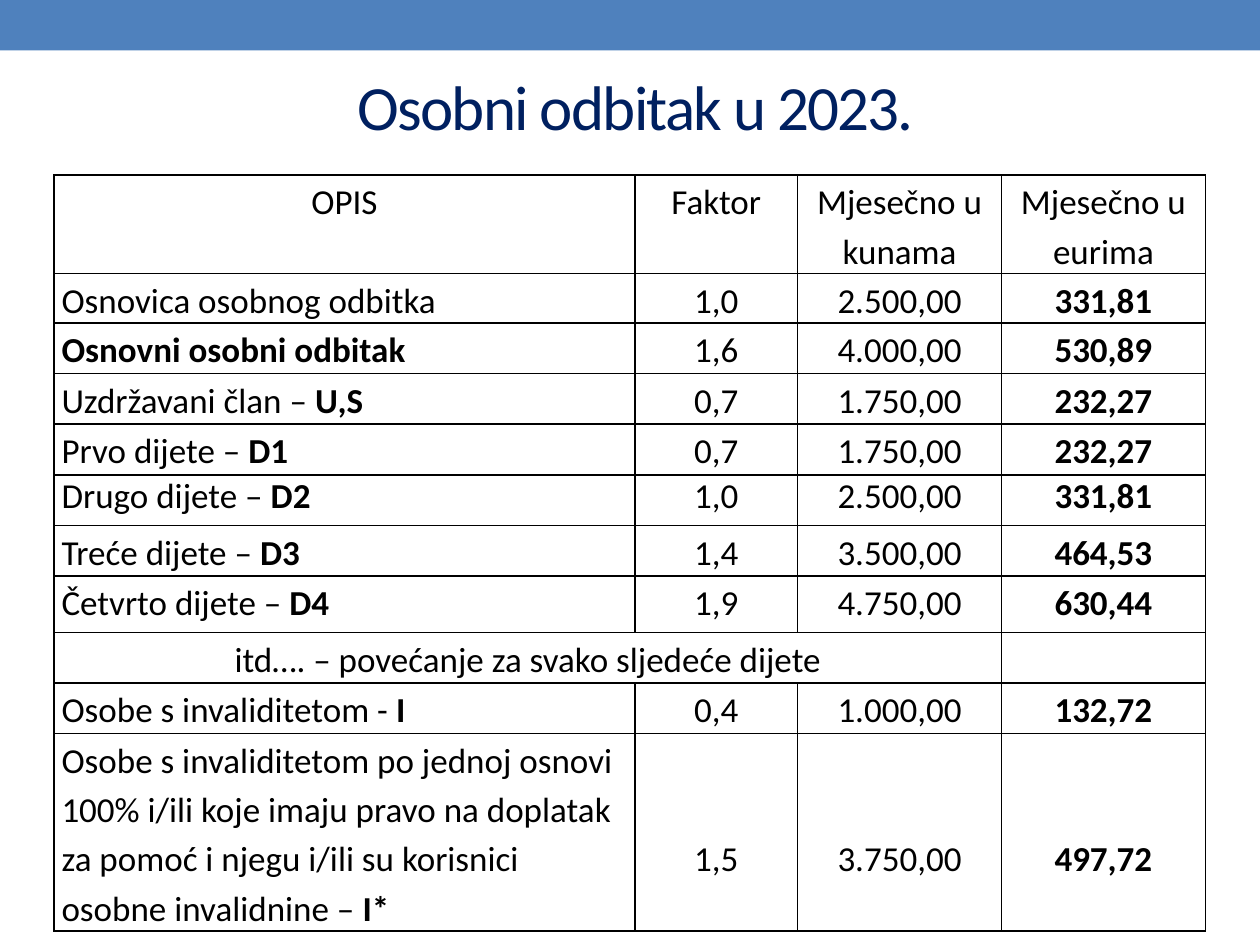
from lxml.etree import SubElement
from pptx import Presentation
from pptx.dml.color import RGBColor
from pptx.enum.shapes import MSO_SHAPE
from pptx.enum.text import MSO_ANCHOR, PP_ALIGN
from pptx.oxml.ns import qn
from pptx.util import Cm, Pt

FONT = "Calibri"
COLUMN_WIDTHS = [11.71, 3.28, 4.11, 4.11]
ROW_HEIGHTS = [1.3, 0.91] + [1.02] * 5 + [1.14, 1.02, 1.02, 3.56]
TWO_LINES = 1.98  # lowers the values in the tall last row to its third line

# Description, its bold ending, factor, kunas, euros
DEDUCTIONS = [
    ("Osnovica osobnog odbitka", "", "1,0", "2.500,00", "331,81"),
    ("", "Osnovni osobni odbitak", "1,6", "4.000,00", "530,89"),
    ("Uzdržavani član – ", "U,S", "0,7", "1.750,00", "232,27"),
    ("Prvo dijete – ", "D1", "0,7", "1.750,00", "232,27"),
    ("Drugo dijete – ", "D2", "1,0", "2.500,00", "331,81"),
    ("Treće dijete – ", "D3", "1,4", "3.500,00", "464,53"),
    ("Četvrto dijete – ", "D4", "1,9", "4.750,00", "630,44"),
    ("itd…. – povećanje za svako sljedeće dijete", "", "", "", ""),
    ("Osobe s invaliditetom - ", "I", "0,4", "1.000,00", "132,72"),
    ("Osobe s invaliditetom po jednoj osnovi 100% i/ili koje imaju pravo na "
     "doplatak za pomoć i njegu i/ili su korisnici osobne invalidnine – ",
     "I*", "1,5", "3.750,00", "497,72"),
]
HEADINGS = ("OPIS", "", "Faktor", "Mjesečno u kunama", "Mjesečno u eurima")
SINGLE_SPACED_ROW = 5
CONTINUATION_ROW = 8


def color(hex_string):
    return RGBColor.from_string(hex_string)


def style_font(font, size, hex_string):
    font.name = FONT
    font.size = Pt(size)
    font.color.rgb = color(hex_string)


def add_top_band(slide, left, top, width, height):
    band = slide.shapes.add_shape(
        MSO_SHAPE.RECTANGLE, Cm(left), Cm(top), Cm(width), Cm(height))
    band.shadow.inherit = False
    band.fill.solid()
    band.fill.fore_color.rgb = color("4F81BD")
    band.line.fill.background()


def place_title(slide, left, top, width, height):
    title = slide.shapes.title
    title.left, title.top = Cm(left), Cm(top)
    title.width, title.height = Cm(width), Cm(height)
    title.text_frame.vertical_anchor = MSO_ANCHOR.MIDDLE
    heading = title.text_frame.paragraphs[0]
    heading.alignment = PP_ALIGN.CENTER
    style_font(heading.font, 36, "002060")
    wording = heading.add_run()
    wording.text = "Osobni odbitak u 2023."
    wording.font._element.set("spc", "-100")


def outline_cell(cell):
    properties = cell._tc.get_or_add_tcPr()
    for position, side in enumerate(("a:lnL", "a:lnR", "a:lnT", "a:lnB")):
        border = properties.makeelement(qn(side), {"w": str(Pt(1))})
        properties.insert(position, border)
        fill = SubElement(border, qn("a:solidFill"))
        SubElement(fill, qn("a:srgbClr"), val="000000")


def write_cell(cell, parts, alignment, spacing):
    """Fill a cell with (text, bold) parts."""
    paragraph = cell.text_frame.paragraphs[0]
    paragraph.alignment = alignment
    paragraph.line_spacing = spacing
    style_font(paragraph.font, 20, "000000")
    for text, bold in parts:
        if text:
            run = paragraph.add_run()
            run.text = text
            run.font.bold = bold


def add_deduction_table(slide, left, top, width, height):
    rows = [HEADINGS] + DEDUCTIONS
    frame = slide.shapes.add_table(
        len(rows), len(COLUMN_WIDTHS), Cm(left), Cm(top), Cm(width), Cm(height))
    table = frame.table
    table.first_row = table.horz_banding = False
    for column, column_width in zip(table.columns, COLUMN_WIDTHS):
        column.width = Cm(column_width)
    for row, row_height in zip(table.rows, ROW_HEIGHTS):
        row.height = Cm(row_height)
    frame.height = Cm(height)

    for r, (description, code, *values) in enumerate(rows):
        spacing = 1.0 if r == SINGLE_SPACED_ROW else 1.15
        contents = [[(description, False), (code, True)]]
        contents += [[(value, r > 0 and value == values[-1])] for value in values]
        for c, parts in enumerate(contents):
            cell = table.cell(r, c)
            cell.margin_left = cell.margin_right = Cm(0.15)
            cell.margin_top = cell.margin_bottom = 0
            if c > 0 and r == len(rows) - 1:
                cell.margin_top = Cm(TWO_LINES)
            cell.fill.background()
            outline_cell(cell)
            centred = c > 0 or r in (0, CONTINUATION_ROW)
            write_cell(cell, parts,
                       PP_ALIGN.CENTER if centred else PP_ALIGN.LEFT, spacing)

    # The continuation note runs under the first three columns
    table.cell(CONTINUATION_ROW, 0).merge(table.cell(CONTINUATION_ROW, 2))


def main():
    presentation = Presentation()
    presentation.slide_width, presentation.slide_height = Cm(25.4), Cm(19.05)
    slide = presentation.slides.add_slide(presentation.slide_layouts[5])
    add_top_band(slide, 0, 0, 25.4, 1.02)
    place_title(slide, 0.51, 1.12, 24.61, 2.01)
    add_deduction_table(slide, 1.09, 3.53, 23.19, 14.88)
    presentation.save("out.pptx")


if __name__ == "__main__":
    main()
